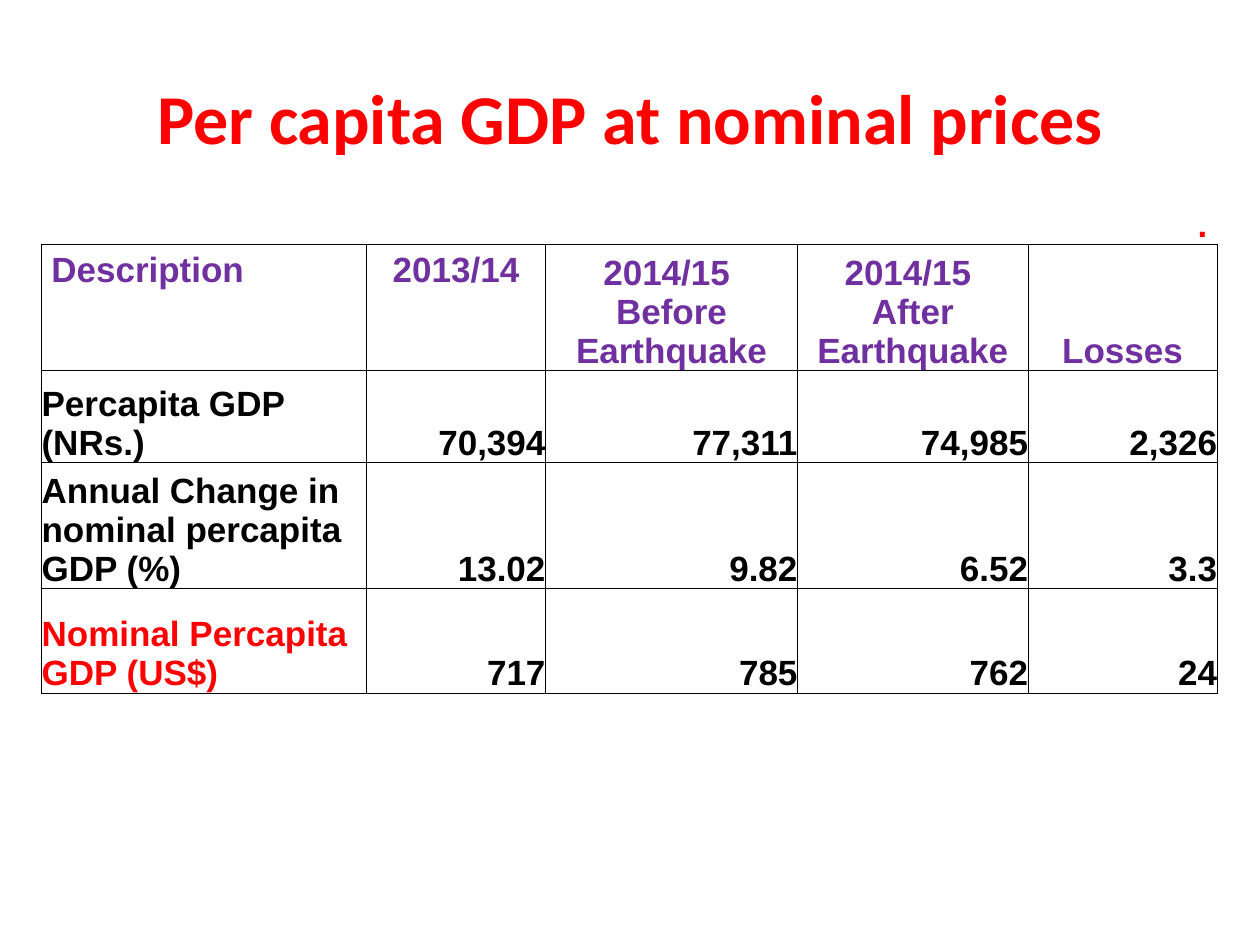
from dataclasses import dataclass

from lxml.etree import SubElement
from pptx import Presentation
from pptx.dml.color import RGBColor
from pptx.enum.text import MSO_ANCHOR, PP_ALIGN
from pptx.oxml.ns import qn
from pptx.util import Inches, Length, Pt


@dataclass(frozen=True)
class Theme:
    red: RGBColor = RGBColor(0xFF, 0x00, 0x00)
    purple: RGBColor = RGBColor(0x70, 0x30, 0xA0)
    black: RGBColor = RGBColor(0x00, 0x00, 0x00)
    title_font: str = "Calibri"
    table_font: str = "Arial"
    title_size: Length = Pt(40)
    table_size: Length = Pt(20)
    border_width: Length = Pt(0.5)


@dataclass(frozen=True)
class CellText:
    paragraphs: tuple[str, ...]
    color: RGBColor
    alignment: PP_ALIGN = PP_ALIGN.RIGHT
    anchor: MSO_ANCHOR = MSO_ANCHOR.BOTTOM
    margin_top: Length = Inches(0)


@dataclass(frozen=True)
class Measure:
    label: str
    values: tuple[str, ...]
    label_color: RGBColor


THEME = Theme()
COLUMN_WIDTHS = (2.58, 1.42, 2, 1.83, 1.5)
ROW_HEIGHTS = (0.44, 0.98, 0.73, 0.93, 0.83)
ALL_SIDES = ("L", "R", "T", "B")
HEADER_INSET = Inches(0.05)

UNIT_MARK = CellText((". ",), THEME.red)
HEADERS = (
    CellText((" Description",), THEME.purple, PP_ALIGN.LEFT, MSO_ANCHOR.TOP, HEADER_INSET),
    CellText(("2013/14",), THEME.purple, PP_ALIGN.CENTER, MSO_ANCHOR.TOP, HEADER_INSET),
    CellText(("2014/15  Before Earthquake",), THEME.purple, PP_ALIGN.CENTER),
    CellText(("2014/15 ", "After Earthquake"), THEME.purple, PP_ALIGN.CENTER),
    CellText(("Losses",), THEME.purple, PP_ALIGN.CENTER),
)
MEASURES = (
    Measure("Percapita GDP (NRs.)", ("70,394", "77,311", "74,985", "2,326"), THEME.black),
    Measure("Annual Change in nominal percapita GDP (%)", ("13.02", "9.82", "6.52", "3.3"), THEME.black),
    Measure("Nominal Percapita GDP (US$)", ("717", "785", "762", "24"), THEME.red),
)


def add_bold_run(paragraph, text: str, font_name: str, size: Length, color: RGBColor) -> None:
    run = paragraph.add_run()
    run.text = text
    run.font.name = font_name
    run.font.size = size
    run.font.bold = True
    run.font.color.rgb = color


def add_title(slide, text: str) -> None:
    title = slide.shapes.add_textbox(Inches(0.5), Inches(0.3), Inches(9), Inches(1.25))
    frame = title.text_frame
    frame.word_wrap = True
    frame.vertical_anchor = MSO_ANCHOR.MIDDLE
    paragraph = frame.paragraphs[0]
    paragraph.alignment = PP_ALIGN.CENTER
    add_bold_run(paragraph, text, THEME.title_font, THEME.title_size, THEME.red)


def style_cell(cell, sides: tuple[str, ...]) -> None:
    """Clear the fill and rule the given sides."""
    properties = cell._tc.get_or_add_tcPr()
    for side in sides:
        line = SubElement(properties, qn(f"a:ln{side}"), w=str(int(THEME.border_width)))
        fill = SubElement(line, qn("a:solidFill"))
        SubElement(fill, qn("a:srgbClr"), val=str(THEME.black))
    cell.fill.background()


def fill_cell(cell, content: CellText) -> None:
    cell.margin_left = cell.margin_right = cell.margin_bottom = Inches(0)
    cell.margin_top = content.margin_top
    cell.vertical_anchor = content.anchor
    frame = cell.text_frame
    for index, text in enumerate(content.paragraphs):
        paragraph = frame.add_paragraph() if index else frame.paragraphs[0]
        paragraph.alignment = content.alignment
        add_bold_run(paragraph, text, THEME.table_font, THEME.table_size, content.color)


def measure_cells(measure: Measure) -> tuple[CellText, ...]:
    label = CellText((measure.label,), measure.label_color, PP_ALIGN.LEFT)
    return (label, *(CellText((value,), THEME.black) for value in measure.values))


def add_gdp_table(slide) -> None:
    frame = slide.shapes.add_table(
        len(ROW_HEIGHTS), len(COLUMN_WIDTHS), Inches(0.33), Inches(1.5),
        Inches(sum(COLUMN_WIDTHS)), Inches(sum(ROW_HEIGHTS)),
    )
    table = frame.table
    table.first_row = table.horz_banding = False
    for column, width in zip(table.columns, COLUMN_WIDTHS):
        column.width = Inches(width)
    for row, height in zip(table.rows, ROW_HEIGHTS):
        row.height = Inches(height)

    unit_row = (None,) * (len(COLUMN_WIDTHS) - 1) + (UNIT_MARK,)
    contents = (unit_row, HEADERS, *map(measure_cells, MEASURES))
    for row_index, row_contents in enumerate(contents):
        sides = ALL_SIDES if row_index else ("B",)
        for column_index, content in enumerate(row_contents):
            cell = table.cell(row_index, column_index)
            style_cell(cell, sides)
            if content:
                fill_cell(cell, content)


def main() -> None:
    presentation = Presentation()
    presentation.slide_width = Inches(10)
    presentation.slide_height = Inches(7.5)
    slide = presentation.slides.add_slide(presentation.slide_layouts[6])
    add_title(slide, "Per capita GDP at nominal prices")
    add_gdp_table(slide)
    presentation.save("out.pptx")


if __name__ == "__main__":
    main()
